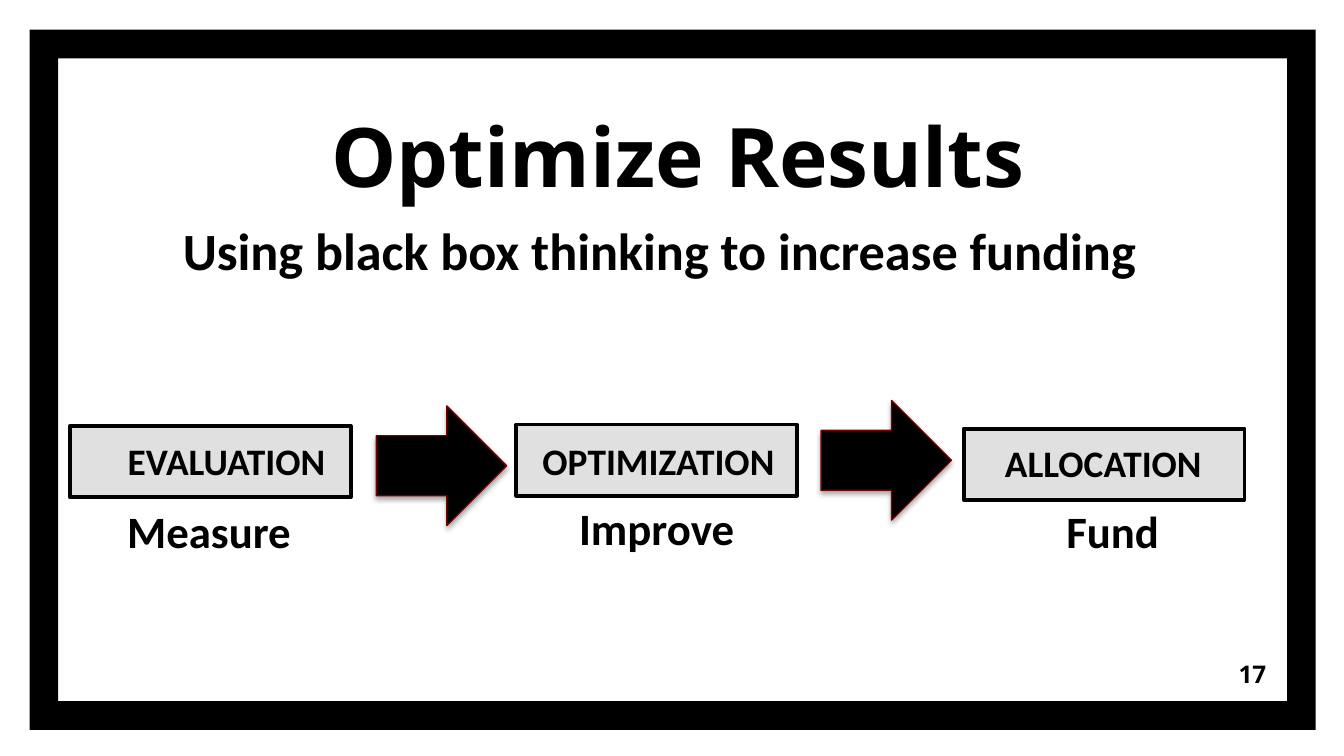
from dataclasses import dataclass

import pptx
import pptx.dml.color
import pptx.enum.shapes
import pptx.enum.text
import pptx.oxml
import pptx.oxml.ns
import pptx.util

Inches = pptx.util.Inches
Pt = pptx.util.Pt
MSO_SHAPE = pptx.enum.shapes.MSO_SHAPE
PP_ALIGN = pptx.enum.text.PP_ALIGN
MSO_ANCHOR = pptx.enum.text.MSO_ANCHOR


@dataclass(frozen=True)
class Theme:
    """Colours, fonts and type sizes of the slide."""
    black: str = "000000"
    grey: str = "E0E0E0"
    arrow_line: str = "710000"
    heading_font: str = "Noto Sans"
    body_font: str = "Calibri"
    title: int = 44
    subtitle: int = 28
    caption: int = 24
    label: int = 20
    number: int = 13


THEME = Theme()
STEPS = [
    ("EVALUATION", "Measure", (0.52, 3.17, 2.09, 0.53), (0.12, 0.06, 2.09), (-0.01, 0.53, 2.09)),
    ("OPTIMIZATION", "Improve", (3.84, 3.16, 2.09, 0.53), (0.08, 0.07, 1.96), (0, 0.52, 2.09)),
    ("ALLOCATION", "Fund", (7.17, 3.19, 2.09, 0.53), (0.04, 0.05, 2), (0.09, 0.51, 2.04)),
]
ARROWS = [(2.8, 3.02, 0.97, 0.89), (6.11, 2.98, 0.97, 0.89)]


def rgb(color):
    """Return a colour object for a hex string."""
    return pptx.dml.color.RGBColor.from_string(color)


def add_shape(slide, kind, box, fill, line=None, width=0):
    """Add a filled preset shape with an optional outline."""
    sp = slide.shapes.add_shape(kind, *map(Inches, box))
    sp.shadow.inherit = False
    sp.fill.solid()
    sp.fill.fore_color.rgb = rgb(fill)
    if line:
        sp.line.color.rgb = rgb(line)
        sp.line.width = Pt(width)
    else:
        sp.line.fill.background()
    return sp


def add_text(slide, text, box, size, font=THEME.body_font, align=PP_ALIGN.CENTER,
             anchor=MSO_ANCHOR.MIDDLE, inset=0.05, before=0):
    """Add a one-paragraph bold text box."""
    tf = slide.shapes.add_textbox(*map(Inches, box)).text_frame
    tf.word_wrap = True
    tf.vertical_anchor = anchor
    tf.margin_top = tf.margin_bottom = Inches(inset)
    tf.text = text
    p = tf.paragraphs[0]
    p.alignment = align
    p.space_before = Pt(before)
    r = p.runs[0]
    r.font.name = font
    r.font.size = Pt(size)
    r.font.bold = True
    r.font.color.rgb = rgb(THEME.black)


def add_frame(slide, box):
    """Draw the black border."""
    sp = add_shape(slide, MSO_SHAPE.FRAME, box, THEME.black)
    sp.adjustments[0] = 0.041


def add_arrow(slide, box):
    """Draw a block arrow with a soft shadow below it."""
    sp = add_shape(slide, MSO_SHAPE.RIGHT_ARROW, box, THEME.black, THEME.arrow_line, 0.75)
    effects = sp._element.spPr.find(pptx.oxml.ns.qn("a:effectLst"))
    effects.append(pptx.oxml.parse_xml(
        f'<a:outerShdw {pptx.oxml.ns.nsdecls("a")} blurRad="{Pt(3.1)}" dist="{Pt(1.8)}" '
        f'dir="5400000" rotWithShape="0"><a:srgbClr val="{THEME.black}">'
        '<a:alpha val="35000"/></a:srgbClr></a:outerShdw>'))


def add_step(slide, label, caption, box, label_offset, caption_offset):
    """Draw a grey step box with its label and the caption under it."""
    left, top = box[:2]
    add_shape(slide, MSO_SHAPE.RECTANGLE, box, THEME.grey, THEME.black, 2)
    dx, dy, width = label_offset
    add_text(slide, label, (left + dx, top + dy, width, 0.4), THEME.label)
    dx, dy, width = caption_offset
    add_text(slide, caption, (left + dx, top + dy, width, 0.5), THEME.caption,
             anchor=MSO_ANCHOR.TOP)


def add_heading(slide, box):
    """Place the title and the subtitle inside the heading box."""
    left, top, width, height = box
    add_text(slide, "Optimize Results", (left + 0.19, top, width - 0.1, 0.8), THEME.title,
             THEME.heading_font, anchor=MSO_ANCHOR.BOTTOM, inset=0.1)
    add_text(slide, "Using black box thinking to increase funding",
             (left, top + height - 0.57, width, 0.57), THEME.subtitle, inset=0.1, before=6)


def add_number(slide, box):
    """Place the slide number."""
    add_text(slide, "17", box, THEME.number, THEME.heading_font, PP_ALIGN.RIGHT, inset=0.1)


def main():
    """Build and save the slide."""
    prs = pptx.Presentation()
    prs.slide_width = Inches(10)
    prs.slide_height = prs.slide_width * 9 // 16
    s = prs.slides.add_slide(prs.slide_layouts[6])
    add_frame(s, (0.22, 0.22, 9.57, 5.21))
    for box in ARROWS:
        add_arrow(s, box)
    for step in STEPS:
        add_step(s, *step)
    add_heading(s, (0.46, 0.82, 8.89, 1.32))
    add_number(s, (8.92, 4.8, 0.6, 0.43))
    prs.save("out.pptx")


if __name__ == "__main__":
    main()
